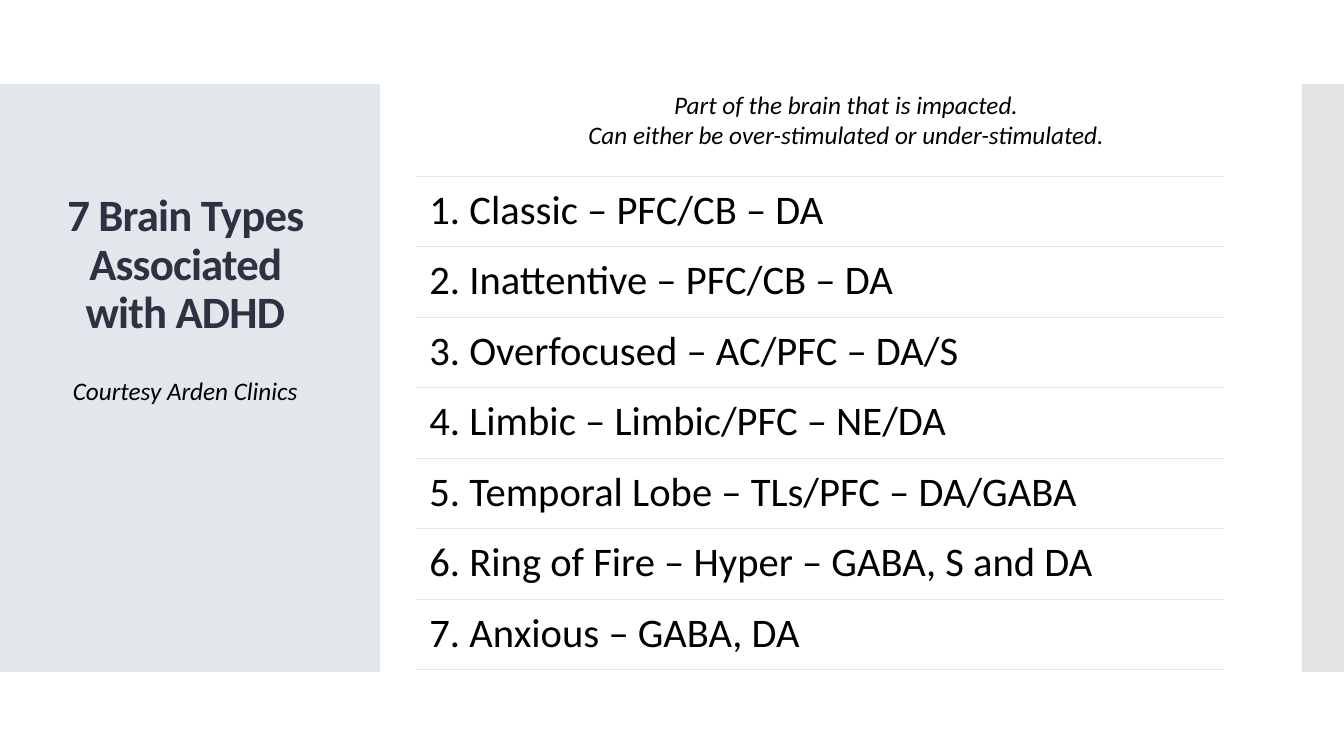
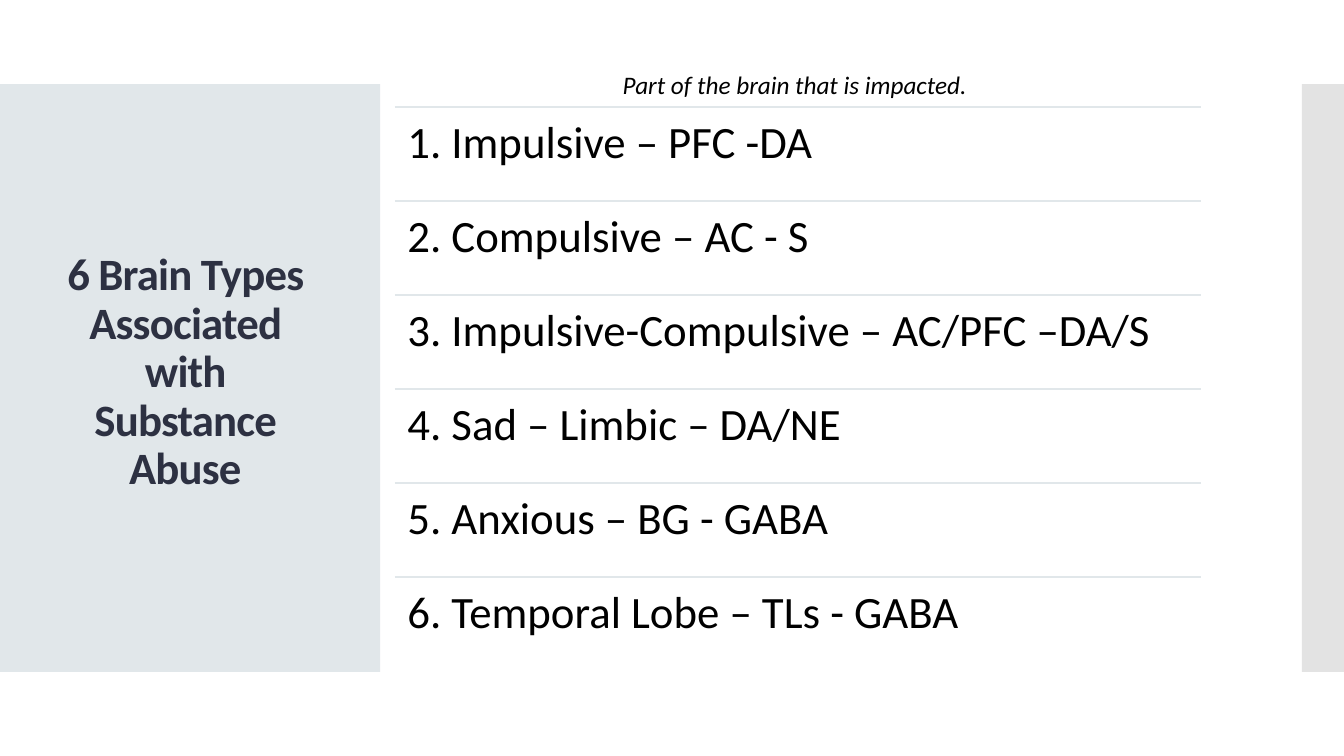
from lxml.etree import SubElement
from pptx import Presentation
from pptx.dml.color import RGBColor
from pptx.enum.shapes import MSO_CONNECTOR, MSO_SHAPE
from pptx.enum.text import MSO_ANCHOR, MSO_AUTO_SIZE, PP_ALIGN
from pptx.oxml.ns import qn
from pptx.util import Pt

EMU_PER_PX = 9525
WIDTH, HEIGHT = 1280, 720
FONT = "Calibri"
MIST = RGBColor(0xE1, 0xE7, 0xEA)
GRAY = RGBColor(0xC8, 0xC8, 0xC8)
NAVY = RGBColor(0x2D, 0x31, 0x42)
BLACK = RGBColor(0x00, 0x00, 0x00)


def px(*lengths):
    return [round(length * EMU_PER_PX) for length in lengths]


class Deck:
    def __init__(self):
        self.presentation = Presentation()
        self.presentation.slide_width, self.presentation.slide_height = px(WIDTH, HEIGHT)
        self.layout = self.presentation.slide_layouts.get_by_name("Title Only")
        self.slide = None

    def add_slide(self):
        self.slide = self.presentation.slides.add_slide(self.layout)

    def layout_band(self, left, width, color, opacity, shape_id):
        band = self.slide.shapes.add_shape(MSO_SHAPE.RECTANGLE, *px(left, 80, width, 560))
        band.shadow.inherit = False
        band.fill.solid()
        band.fill.fore_color.rgb = color
        band.line.fill.background()
        fill_color = band.element.xpath("./p:spPr/a:solidFill/a:srgbClr")[0]
        SubElement(fill_color, qn("a:alpha"), val=str(opacity * 1000))
        band.element.xpath(".//p:cNvPr")[0].set("id", str(shape_id))
        self.layout.shapes.element.insert(2, band.element)

    def style(self, paragraph, size, color=BLACK, bold=False, italic=False):
        font = paragraph.font
        font.name, font.size, font.color.rgb = FONT, Pt(size), color
        font.bold, font.italic = bold, italic

    def title(self, text, height, anchor):
        title = self.slide.shapes.title
        title.left, title.top, title.width, title.height = px(46, 123, 261, height)
        frame = title.text_frame
        frame.text = text
        frame.word_wrap = True
        frame.auto_size = MSO_AUTO_SIZE.NONE
        frame.vertical_anchor = anchor
        paragraph = frame.paragraphs[0]
        paragraph.alignment = PP_ALIGN.CENTER
        paragraph.line_spacing = 0.9
        self.style(paragraph, 32, NAVY, bold=True)
        title.element.xpath(".//a:defRPr")[0].set("spc", "-60")

    def text_box(self, text, left, top, width, height):
        frame = self.slide.shapes.add_textbox(*px(left, top, width, height)).text_frame
        frame.word_wrap = True
        frame.text = text
        return frame

    def caption(self, text, left, top, width, height):
        for paragraph in self.text_box(text, left, top, width, height).paragraphs:
            paragraph.alignment = PP_ALIGN.CENTER
            self.style(paragraph, 18, italic=True)

    def rule(self, left, top, width):
        rule = self.slide.shapes.add_connector(
            MSO_CONNECTOR.STRAIGHT, *px(left, top, left + width, top))
        rule.line.color.rgb = MIST
        rule.line.width = Pt(0.85)
        SubElement(rule.element.xpath("./p:spPr")[0], qn("a:effectLst"))

    def ruled_list(self, items, left, top, height, size, closed=False):
        width, inset = 768, px(12)[0]
        step = height / len(items)
        for index, item in enumerate(items):
            row_top = top + index * step
            self.rule(left, row_top, width)
            frame = self.text_box(f"{index + 1}. {item}", left, row_top, width, step)
            frame.margin_left = frame.margin_right = inset
            frame.margin_top = frame.margin_bottom = inset
            paragraph = frame.paragraphs[0]
            paragraph.line_spacing = 0.9
            self.style(paragraph, size)
        if closed:
            self.rule(left, top + height, width)


def main():
    deck = Deck()

    deck.add_slide()
    deck.layout_band(0, 362, MIST, 100, 21)
    deck.layout_band(1240, 40, GRAY, 50, 22)
    deck.title("7 Brain Types Associated with ADHD", 204, MSO_ANCHOR.BOTTOM)
    deck.caption("Courtesy Arden Clinics", 46, 353, 261, 38)
    deck.caption("Part of the brain that is impacted.\n"
                 "Can either be over-stimulated or under-stimulated.", 411, 80, 790, 68)
    deck.ruled_list([
        "Classic – PFC/CB – DA",
        "Inattentive – PFC/CB – DA",
        "Overfocused – AC/PFC – DA/S",
        "Limbic – Limbic/PFC – NE/DA",
        "Temporal Lobe – TLs/PFC – DA/GABA",
        "Ring of Fire – Hyper – GABA, S and DA",
        "Anxious – GABA, DA",
    ], 397, 168, 470, 29, closed=True)

    deck.add_slide()
    deck.title("6 Brain Types Associated with Substance Abuse", 465, MSO_ANCHOR.MIDDLE)
    deck.caption("Part of the brain that is impacted.", 373, 61, 768, 38)
    deck.ruled_list([
        "Impulsive – PFC -DA",
        "Compulsive – AC - S",
        "Impulsive-Compulsive – AC/PFC –DA/S",
        "Sad – Limbic – DA/NE",
        "Anxious – BG - GABA",
        "Temporal Lobe – TLs - GABA",
    ], 376, 102, 537, 32)

    deck.presentation.save("out.pptx")


if __name__ == "__main__":
    main()
